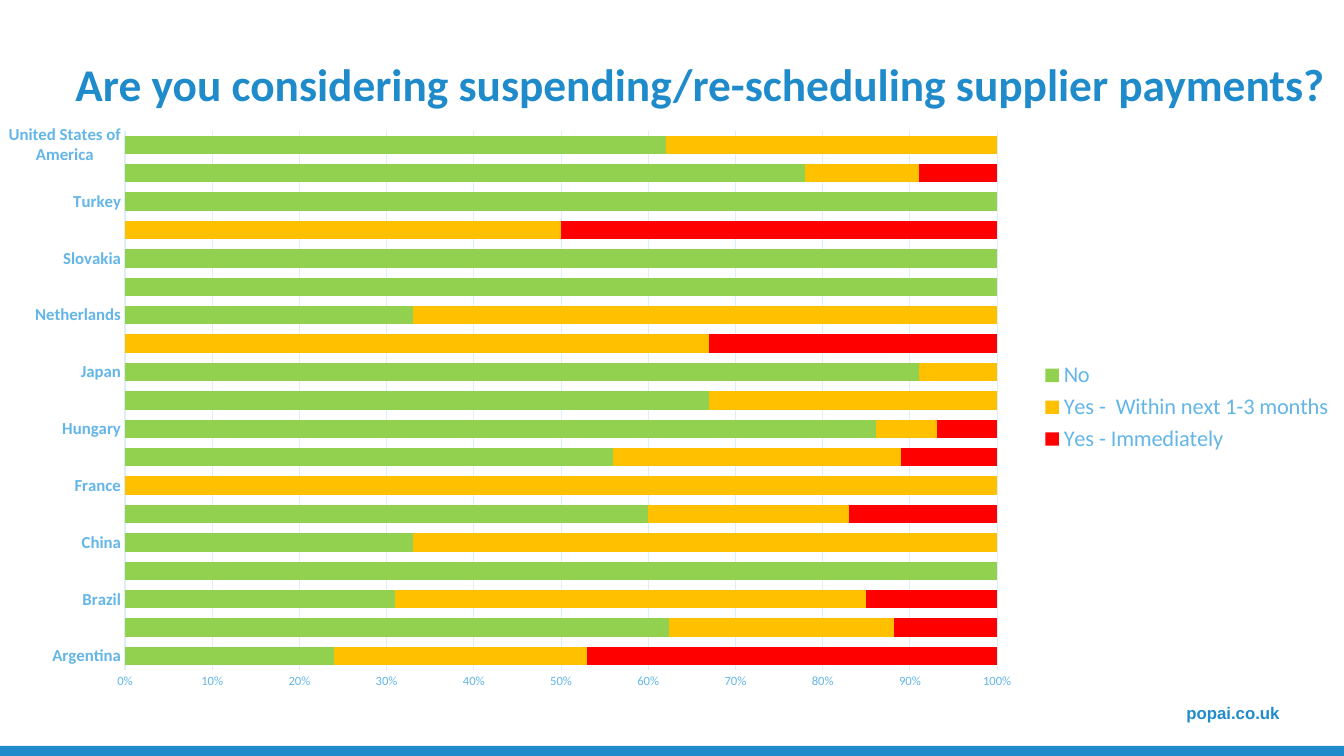
import pptx
import pptx.chart.data
import pptx.dml.color
import pptx.enum.chart
import pptx.enum.shapes
import pptx.enum.text
import pptx.oxml
import pptx.oxml.ns
import pptx.util

W, H = 13.33, 7.5
BLUE, SKY, PALE = "1F8BCB", "63B6E7", "DBEEFA"

COUNTRIES = ["Argentina", "Australia", "Brazil", "Canada", "China", "Czech Republic", "France",
             "Germany", "Hungary", "Ireland", "Japan", "Mexico", "Netherlands", "New Zealand",
             "Slovakia", "South Africa", "Turkey", "United Kingdom", "United States of America"]
ANSWERS = [
    ("No", "92D050",
     [24, 63, 31, 100, 33, 60, 0, 56, 87, 67, 91, 0, 33, 100, 100, 0, 100, 78, 62]),
    ("Yes -  Within next 1-3 months", "FFC000",
     [29, 26, 54, 0, 67, 23, 100, 33, 7, 33, 9, 67, 67, 0, 0, 50, 0, 13, 38]),
    ("Yes - Immediately", "FF0000",
     [47, 12, 15, 0, 0, 17, 0, 11, 7, 0, 0, 33, 0, 0, 0, 50, 0, 9, 0]),
]


def rgb(value):
    return pptx.dml.color.RGBColor.from_string(value)


def inches(box):
    return [pptx.util.Inches(v) for v in box]


def set_font(font, size, color, bold=False, name="Calibri"):
    for key, value in {"name": name, "size": pptx.util.Pt(size), "bold": bold}.items():
        setattr(font, key, value)
    font.color.rgb = rgb(color)


def add_text(s, box, text, align, size, **font):
    tf = s.shapes.add_textbox(*inches(box)).text_frame
    tf.word_wrap = True
    tf.vertical_anchor = pptx.enum.text.MSO_ANCHOR.MIDDLE
    p = tf.paragraphs[0]
    p.alignment = align
    r = p.add_run()
    r.text = text
    set_font(r.font, size, BLUE, bold=True, **font)


def add_footer(s, box):
    """Web address, right-aligned above a full-width bar."""
    x, y, w, h = box
    add_text(s, (x + w - 3.16, y, 2.62, 0.3), "popai.co.uk",
             pptx.enum.text.PP_ALIGN.RIGHT, 12, name="Arial")
    bar = s.shapes.add_shape(pptx.enum.shapes.MSO_SHAPE.RECTANGLE,
                             *inches((x, y + h - 0.16, w, 0.16)))
    bar.shadow.inherit = False
    bar.fill.solid()
    bar.fill.fore_color.rgb = rgb(BLUE)
    bar.line.fill.background()


def set_plot_area(chart, x, y, w, h):
    """Fix the inner plot area, in shares of the chart's size."""
    plot_area = chart.plots[0]._element.getparent()
    for old in plot_area.findall(pptx.oxml.ns.qn("c:layout")):
        plot_area.remove(old)
    shares = "".join(f'<c:{tag} val="{v}"/>' for tag, v in zip("xywh", (x, y, w, h)))
    plot_area.insert(0, pptx.oxml.parse_xml(
        f'<c:layout {pptx.oxml.ns.nsdecls("c")}><c:manualLayout><c:layoutTarget val="inner"/>'
        f'<c:xMode val="edge"/><c:yMode val="edge"/>{shares}</c:manualLayout></c:layout>'))


def format_axis(axis, size, bold):
    axis.major_tick_mark = axis.minor_tick_mark = pptx.enum.chart.XL_TICK_MARK.NONE
    set_font(axis.tick_labels.font, size, SKY, bold)


def format_line(line):
    line.color.rgb = rgb(PALE)
    line.width = pptx.util.Pt(0.75)


def add_answers_chart(s, box):
    data = pptx.chart.data.CategoryChartData(number_format="0%")
    data.categories = COUNTRIES
    for name, _, percents in ANSWERS:
        data.add_series(name, [v / 100 for v in percents])
    chart = s.shapes.add_chart(pptx.enum.chart.XL_CHART_TYPE.BAR_STACKED_100,
                               *inches(box), data).chart
    set_font(chart.font, 10, BLUE)
    chart.has_title = False
    set_plot_area(chart, 0.093, 0.03, 0.649, 0.917)

    plot = chart.plots[0]
    for key, value in {"gap_width": 55, "overlap": 100, "vary_by_categories": False}.items():
        setattr(plot, key, value)
    for series, (_, color, _) in zip(plot.series, ANSWERS):
        series.format.fill.solid()
        series.format.fill.fore_color.rgb = rgb(color)

    format_axis(chart.category_axis, 12, True)
    format_line(chart.category_axis.format.line)
    values = chart.value_axis
    format_axis(values, 9, False)
    values.format.line.fill.background()
    format_line(values.major_gridlines.format.line)
    values.maximum_scale, values.major_unit = 1, 0.1
    values.tick_labels.number_format = "0%"
    values.tick_labels.number_format_is_linked = False

    chart.has_legend = True
    chart.legend.position = pptx.enum.chart.XL_LEGEND_POSITION.RIGHT
    chart.legend.include_in_layout = False
    set_font(chart.legend.font, 16, SKY)


def main():
    prs = pptx.Presentation()
    prs.slide_width, prs.slide_height = inches((W, H))
    s = prs.slides.add_slide(prs.slide_layouts[6])
    add_footer(s, (0, 6.92, W, 0.64))
    add_text(s, (0.65, 0.54, W - 0.65, 0.58),
             "Are you considering suspending/re-scheduling supplier payments?",
             pptx.enum.text.PP_ALIGN.LEFT, 32.4)
    add_answers_chart(s, (0, 1.12, W, 5.84))
    prs.save("out.pptx")


if __name__ == "__main__":
    main()
